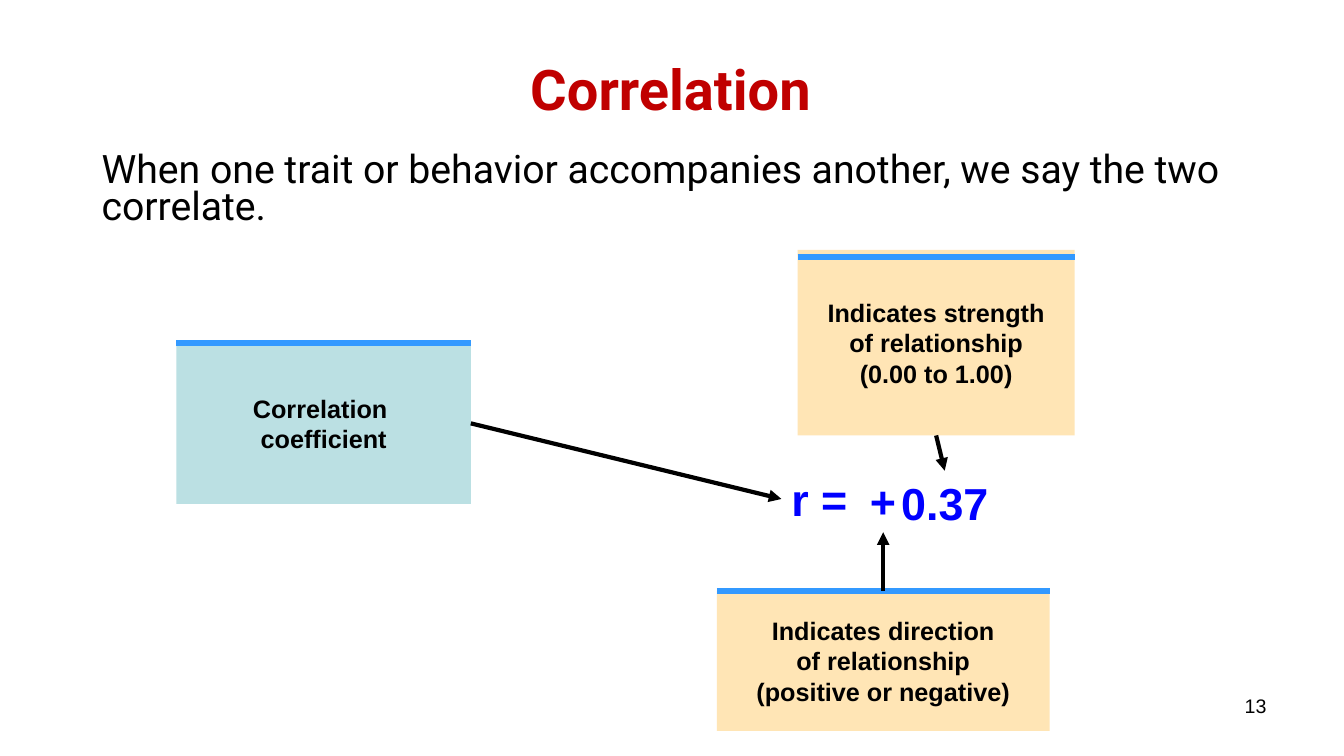
from lxml import etree
from pptx import Presentation
from pptx import util as u
from pptx.dml.color import RGBColor
from pptx.enum import shapes, text
from pptx.oxml.ns import qn

PX = 9144  # 100 px to the inch
RED = RGBColor(0xC0, 0x00, 0x00)
BLACK = RGBColor(0x00, 0x00, 0x00)
BLUE = RGBColor(0x00, 0x00, 0xFF)
SKY = RGBColor(0x33, 0x99, 0xFF)
TEAL = RGBColor(0xBB, 0xE0, 0xE3)
SAND = RGBColor(0xFF, 0xE5, 0xB5)
LEFT, CENTER, RIGHT = text.PP_ALIGN.LEFT, text.PP_ALIGN.CENTER, text.PP_ALIGN.RIGHT

# Content: boxes are (left, top, width, height) in px
TITLE = "Correlation"
DEFINITION = "When one trait or behavior accompanies another, we say the two correlate."
PAGE = "13"
# name: (box, fill, offset of the rule from the top, wording,
#        side the arrow leaves from, arrow tip)
CARDS = {
    "coefficient": ((175, 340, 292, 160), TEAL, 0,
                    "Correlation \ncoefficient", 3, (775, 495)),
    "direction": ((711, 586, 330, 139), SAND, 0,
                  "Indicates direction\nof relationship\n(positive or negative)", 0, (876, 528)),
    "strength": ((791, 248, 275, 184), SAND, 7,
                 "Indicates strength\nof relationship\n(0.00 to 1.00)", 2, (937, 467)),
}
FORMULA = [
    ("r =", (775, 463, 76, 63)),
    ("0.37", (884, 467, 108, 63)),
    ("+", (853, 465, 46, 63)),
]

prs = Presentation()
prs.slide_width, prs.slide_height = 1333 * PX, 750 * PX
slide = prs.slides.add_slide(prs.slide_layouts[6])


def px(values):
    return [v * PX for v in values]


def write(shape, wording, size, color, font="Arial", bold=False, align=LEFT, wrap=True):
    frame = shape.text_frame
    frame.text = wording
    frame.word_wrap = wrap
    for para in frame.paragraphs:
        para.alignment = align
        for run in para.runs:
            run.font.name, run.font.size, run.font.bold = font, u.Pt(size), bold
            run.font.color.rgb = color
    return frame


def label(wording, box, *args, **style):
    return write(slide.shapes.add_textbox(*px(box)), wording, *args, **style)


def line(start, end, color, width):
    connector = slide.shapes.add_connector(
        shapes.MSO_CONNECTOR.STRAIGHT, *px(start), *px(end))
    connector.line.color.rgb = color
    connector.line.width = u.Pt(width)
    etree.SubElement(connector._element.spPr, qn("a:effectLst"))
    return connector


# Heading, definition and page number
label(TITLE, (65, 25, 1200, 125), 40, RED, font="Roboto", bold=True,
      align=CENTER).vertical_anchor = text.MSO_ANCHOR.MIDDLE
definition = label(DEFINITION, (91, 147, 1200, 100), 28, BLACK, font="Roboto").paragraphs[0]
definition.line_spacing = 0.8
definition.space_before = u.Pt(5)
label(PAGE, (955, 683, 311, 52), 14, BLACK, align=RIGHT)

# Cards, each with a rule along its top
cards = {}
for name, (box, fill, offset, wording, _, _) in CARDS.items():
    card = slide.shapes.add_shape(shapes.MSO_SHAPE.RECTANGLE, *px(box))
    card.shadow.inherit = False
    card.fill.solid()
    card.fill.fore_color.rgb = fill
    card.line.fill.background()
    frame = write(card, wording, 18, BLACK, bold=True, align=CENTER, wrap=False)
    frame.vertical_anchor = text.MSO_ANCHOR.MIDDLE
    left, top, width, _ = box
    line((left, top + offset), (left + width, top + offset), SKY, 4.5)
    cards[name] = card

# Formula, in boxes that grow with their text
for part, box in FORMULA:
    frame = label(part, box, 32, BLUE, bold=True, wrap=False)
    frame.auto_size = text.MSO_AUTO_SIZE.SHAPE_TO_FIT_TEXT

# Arrows from the cards to the formula
for name, (*_, side, tip) in CARDS.items():
    arrow = line(tip, tip, BLACK, 3)
    arrow.begin_connect(cards[name], side)
    etree.SubElement(arrow.line._get_or_add_ln(), qn("a:tailEnd"), type="triangle")

prs.save("out.pptx")
